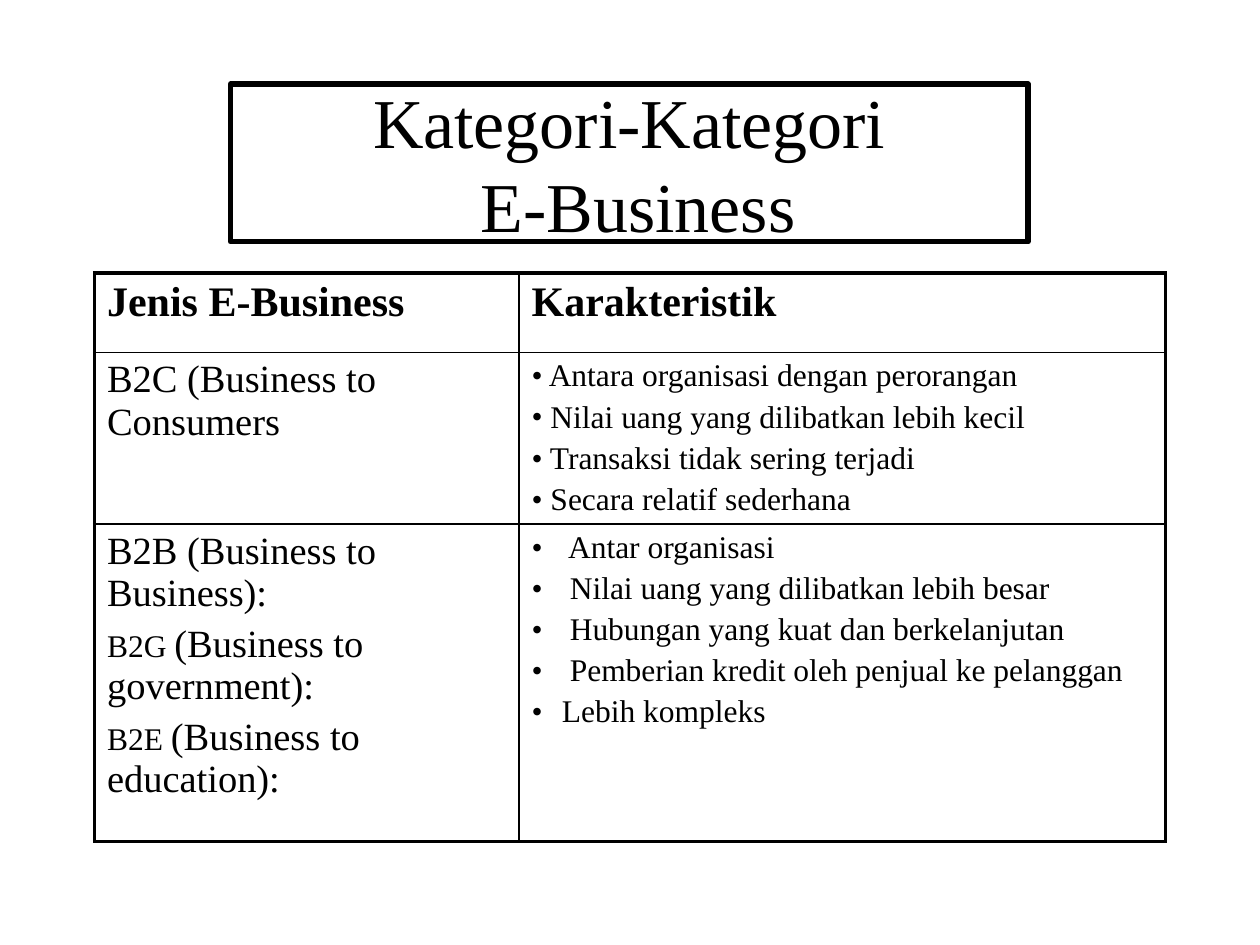
import dataclasses
import typing

import lxml.etree
import pptx
import pptx.dml.color
import pptx.enum.text
import pptx.oxml.ns
import pptx.table
import pptx.text.text
import pptx.util

BLACK = pptx.dml.color.RGBColor(0, 0, 0)
FONT_NAME = "Times New Roman"
SLIDE_WIDTH = pptx.util.Inches(10)
SLIDE_HEIGHT = pptx.util.Inches(7.5)
OUTER_WIDTH = pptx.util.Pt(2.25)
INNER_WIDTH = pptx.util.Pt(1)
COLUMN_WIDTHS = (3.37, 5.13)
ROW_HEIGHTS = (0.63, 1.36, 2.52)
HANGING_INDENT = 0.24


@dataclasses.dataclass(frozen=True)
class Run:
    text: str
    size: float
    bold: bool = False


@dataclasses.dataclass(frozen=True)
class Entry:
    runs: tuple[Run, ...]
    bulleted: bool = False
    indent: float = 0


def plain(text: str, size: float = 22, bold: bool = False) -> Entry:
    return Entry((Run(text, size, bold),))


def category(code: str, name: str) -> Entry:
    return Entry((Run(code, 18), Run(name, 22)))


def bullets(texts: typing.Iterable[str], indent: float = 0) -> list[Entry]:
    return [Entry((Run(text, 18),), True, indent) for text in texts]


TABLE_ROWS = (
    ([plain("Jenis E-Business", 24, True)], [plain("Karakteristik", 24, True)]),
    (
        [plain("B2C (Business to Consumers")],
        bullets((
            " Antara organisasi dengan perorangan",
            " Nilai uang yang dilibatkan lebih kecil",
            " Transaksi tidak sering terjadi",
            " Secara relatif sederhana",
        )),
    ),
    (
        [
            plain("B2B (Business to Business):"),
            category("B2G ", "(Business to government):"),
            category("B2E ", "(Business to education):"),
        ],
        bullets((
            " Antar organisasi",
            " Nilai uang yang dilibatkan lebih besar",
            " Hubungan yang kuat dan berkelanjutan",
            " Pemberian kredit oleh penjual ke pelanggan",
            "Lebih kompleks",
        ), HANGING_INDENT),
    ),
)


def add_element(parent: typing.Any, tag: str, **attributes: str) -> typing.Any:
    return lxml.etree.SubElement(parent, pptx.oxml.ns.qn(tag), attributes)


def format_run(run: typing.Any, size: float, bold: bool = False) -> None:
    for name, value in {"name": FONT_NAME, "size": pptx.util.Pt(size), "bold": bold}.items():
        setattr(run.font, name, value)
    run.font.color.rgb = BLACK


def write_entry(paragraph: typing.Any, entry: Entry) -> None:
    properties = paragraph._p.get_or_add_pPr()
    indent = pptx.util.Inches(entry.indent)
    properties.set("marL", str(indent))
    properties.set("indent", str(-indent))
    add_element(add_element(properties, "a:spcBef"), "a:spcPct", val="20000")
    if entry.bulleted:
        add_element(properties, "a:buFont", typeface=FONT_NAME)
        add_element(properties, "a:buChar", char="•")
    for part in entry.runs:
        run = paragraph.add_run()
        run.text = part.text
        format_run(run, part.size, part.bold)


def draw_borders(cell: pptx.table._Cell, row: int, column: int) -> None:
    outer_sides = {
        "a:lnL": column == 0,
        "a:lnR": column == len(COLUMN_WIDTHS) - 1,
        "a:lnT": row == 0,
        "a:lnB": row == len(ROW_HEIGHTS) - 1,
    }
    properties = cell._tc.get_or_add_tcPr()
    for tag, is_outer in outer_sides.items():
        line = add_element(properties, tag, w=str(OUTER_WIDTH if is_outer else INNER_WIDTH))
        add_element(add_element(line, "a:solidFill"), "a:srgbClr", val=str(BLACK))


def fill_cell(cell: pptx.table._Cell, entries: list[Entry], row: int, column: int) -> None:
    draw_borders(cell, row, column)
    cell.fill.background()
    for index, entry in enumerate(entries):
        frame = cell.text_frame
        write_entry(frame.add_paragraph() if index else frame.paragraphs[0], entry)


def draw_title(slide: typing.Any) -> None:
    title = slide.shapes.title
    placement = {
        "left": int(SLIDE_WIDTH * 0.183),
        "top": int(SLIDE_HEIGHT * 0.089),
        "width": int(SLIDE_WIDTH * 0.633),
        "height": int(SLIDE_HEIGHT * 0.167),
    }
    for name, value in placement.items():
        setattr(title, name, value)
    title.line.color.rgb = BLACK
    title.line.width = pptx.util.Pt(3)
    frame = title.text_frame
    frame.text = "Kategori-Kategori\v E-Business"
    frame_format = {
        "word_wrap": True,
        "auto_size": pptx.enum.text.MSO_AUTO_SIZE.NONE,
        "vertical_anchor": pptx.enum.text.MSO_ANCHOR.MIDDLE,
    }
    for name, value in frame_format.items():
        setattr(frame, name, value)
    paragraph = frame.paragraphs[0]
    paragraph.alignment = pptx.enum.text.PP_ALIGN.CENTER
    for run in paragraph.runs:
        format_run(run, 40)


def draw_table(slide: typing.Any) -> None:
    table = slide.shapes.add_table(
        len(ROW_HEIGHTS), len(COLUMN_WIDTHS),
        int(SLIDE_WIDTH * 0.075), int(SLIDE_HEIGHT * 0.289),
        pptx.util.Inches(sum(COLUMN_WIDTHS)), pptx.util.Inches(sum(ROW_HEIGHTS)),
    ).table
    for name in ("first_row", "horz_banding"):
        setattr(table, name, False)
    for column, width in zip(table.columns, COLUMN_WIDTHS):
        column.width = pptx.util.Inches(width)
    for row, height in zip(table.rows, ROW_HEIGHTS):
        row.height = pptx.util.Inches(height)
    for row_index, row_entries in enumerate(TABLE_ROWS):
        for column_index, entries in enumerate(row_entries):
            fill_cell(table.cell(row_index, column_index), entries, row_index, column_index)


def main() -> None:
    presentation = pptx.Presentation()
    presentation.slide_width = SLIDE_WIDTH
    presentation.slide_height = SLIDE_HEIGHT
    slide = presentation.slides.add_slide(presentation.slide_layouts[5])
    draw_title(slide)
    draw_table(slide)
    presentation.save("out.pptx")


if __name__ == "__main__":
    main()
